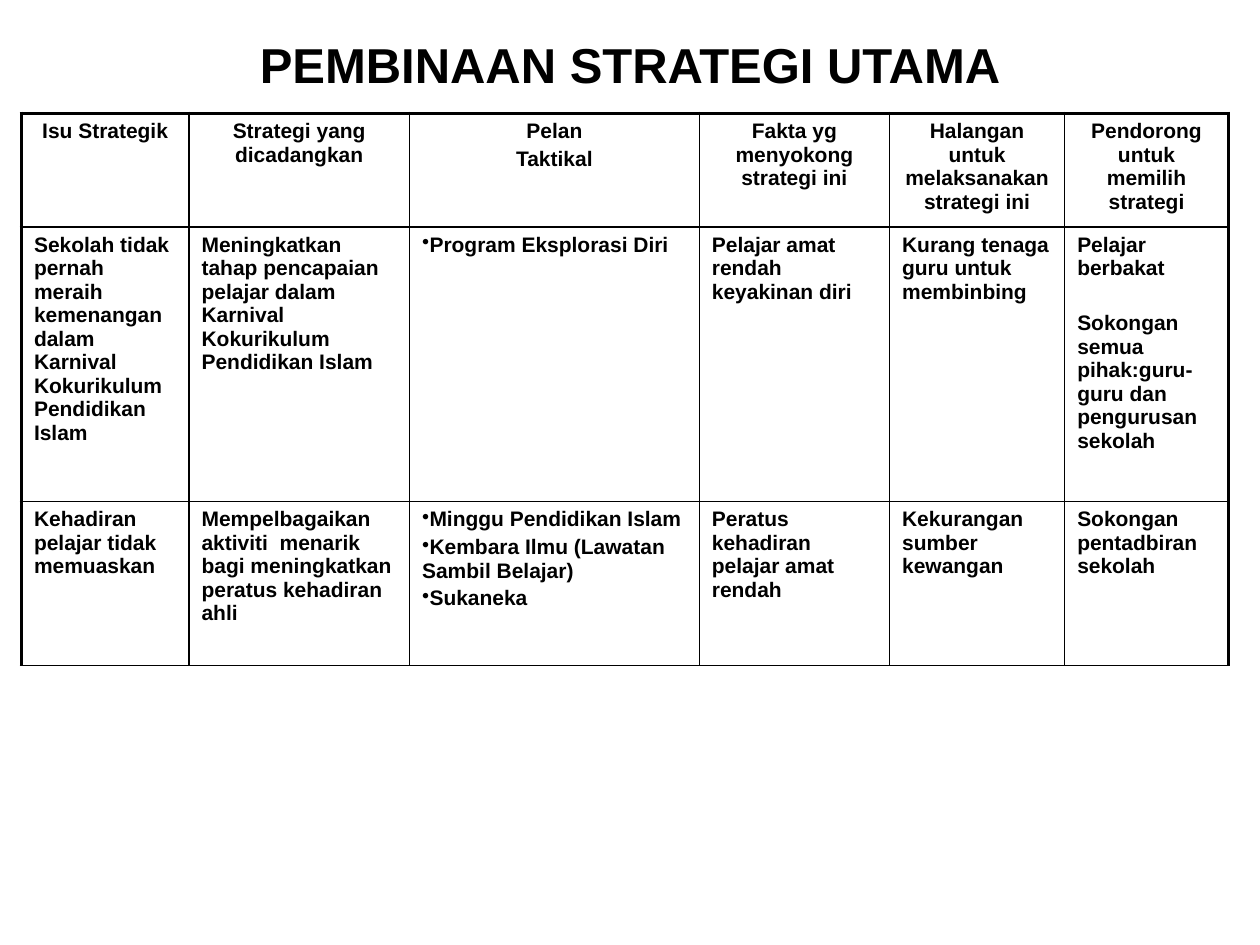
from dataclasses import dataclass

from lxml import etree
from pptx import Presentation
from pptx import util as u
from pptx.dml import color
from pptx.enum import text
from pptx.oxml import ns


@dataclass(frozen=True)
class Theme:
    font: str = "Arial"
    ink: str = "000000"
    title_size: float = 28
    body_size: float = 12
    outer_line: float = 2.25
    inner_line: float = 1
    paragraph_gap: float = 2.4
    section_gap: float = 18


@dataclass(frozen=True)
class Entry:
    paragraphs: tuple[str, ...]
    bulleted: bool = False
    gap: float = Theme.paragraph_gap


THEME = Theme()
COLUMN_WIDTHS = (1.33, 1.75, 2.3, 1.51, 1.39, 1.3)
ROW_HEIGHTS = (0.77, 2.18, 1.3)
ROWS = (
    (
        Entry(("Isu Strategik",)),
        Entry(("Strategi yang dicadangkan",)),
        Entry(("Pelan", "Taktikal")),
        Entry(("Fakta yg menyokong strategi ini",)),
        Entry(("Halangan untuk melaksanakan strategi ini",)),
        Entry(("Pendorong untuk memilih strategi",)),
    ),
    (
        Entry(("Sekolah tidak pernah meraih kemenangan dalam Karnival Kokurikulum Pendidikan Islam",)),
        Entry(("Meningkatkan tahap pencapaian pelajar dalam Karnival Kokurikulum Pendidikan Islam",)),
        Entry(("Program Eksplorasi Diri",), bulleted=True),
        Entry(("Pelajar amat rendah keyakinan diri",)),
        Entry(("Kurang tenaga guru untuk membinbing",)),
        Entry(
            ("Pelajar berbakat", "Sokongan semua pihak:guru-guru dan pengurusan sekolah"),
            gap=THEME.section_gap,
        ),
    ),
    (
        Entry(("Kehadiran pelajar tidak memuaskan",)),
        Entry(("Mempelbagaikan aktiviti  menarik bagi meningkatkan peratus kehadiran ahli",)),
        Entry(
            ("Minggu Pendidikan Islam", "Kembara Ilmu (Lawatan Sambil Belajar)", "Sukaneka"),
            bulleted=True,
        ),
        Entry(("Peratus kehadiran pelajar amat rendah",)),
        Entry(("Kekurangan sumber kewangan",)),
        Entry(("Sokongan pentadbiran sekolah",)),
    ),
)


def style_paragraph(paragraph, size: float, alignment) -> None:
    paragraph.alignment = alignment
    font = paragraph.font
    font.name = THEME.font
    font.size = u.Pt(size)
    font.bold = True
    font.color.rgb = color.RGBColor.from_string(THEME.ink)


def add_bullet(paragraph) -> None:
    properties = paragraph._p.get_or_add_pPr()
    properties.set("marL", "0")
    properties.set("indent", "0")
    etree.SubElement(properties, ns.qn("a:buChar"), char="•")


def set_borders(cell, widths: dict[str, float]) -> None:
    properties = cell._tc.get_or_add_tcPr()
    for position, (side, width) in enumerate(widths.items()):
        line = etree.Element(ns.qn(f"a:ln{side}"), w=str(u.Pt(width)))
        fill = etree.SubElement(line, ns.qn("a:solidFill"))
        etree.SubElement(fill, ns.qn("a:srgbClr"), val=THEME.ink)
        properties.insert(position, line)


def fill_cell(cell, entry: Entry, alignment) -> None:
    cell.fill.background()
    frame = cell.text_frame
    frame.text = "\n".join(entry.paragraphs)
    for index, paragraph in enumerate(frame.paragraphs):
        if index:
            paragraph.space_before = u.Pt(entry.gap)
        if entry.bulleted:
            add_bullet(paragraph)
        style_paragraph(paragraph, THEME.body_size, alignment)


def add_title(slide, title: str) -> None:
    shape = slide.shapes.add_textbox(u.Inches(0.5), u.Inches(0.17), u.Inches(9), u.Inches(0.67))
    frame = shape.text_frame
    frame.word_wrap = True
    frame.vertical_anchor = text.MSO_ANCHOR.MIDDLE
    frame.text = title
    style_paragraph(frame.paragraphs[0], THEME.title_size, text.PP_ALIGN.CENTER)


def add_strategy_table(slide) -> None:
    table = slide.shapes.add_table(
        len(ROWS), len(COLUMN_WIDTHS), u.Inches(0.17), u.Inches(0.9),
        u.Inches(sum(COLUMN_WIDTHS)), u.Inches(sum(ROW_HEIGHTS)),
    ).table
    table.first_row = False
    table.horz_banding = False
    for column, width in zip(table.columns, COLUMN_WIDTHS):
        column.width = u.Inches(width)
    for row, height in zip(table.rows, ROW_HEIGHTS):
        row.height = u.Inches(height)

    last_column = len(COLUMN_WIDTHS) - 1
    for row_index, entries in enumerate(ROWS):
        alignment = text.PP_ALIGN.LEFT if row_index else text.PP_ALIGN.CENTER
        for column_index, entry in enumerate(entries):
            cell = table.cell(row_index, column_index)
            fill_cell(cell, entry, alignment)
            set_borders(cell, {
                "L": THEME.inner_line if column_index else THEME.outer_line,
                "R": THEME.outer_line if column_index == last_column else THEME.inner_line,
                "T": THEME.inner_line if row_index else THEME.outer_line,
                "B": THEME.inner_line,
            })


def main() -> None:
    presentation = Presentation()
    presentation.slide_width = u.Inches(10)
    presentation.slide_height = u.Inches(7.5)
    slide = presentation.slides.add_slide(presentation.slide_layouts[6])
    add_title(slide, "PEMBINAAN STRATEGI UTAMA")
    add_strategy_table(slide)
    presentation.save("out.pptx")


if __name__ == "__main__":
    main()
